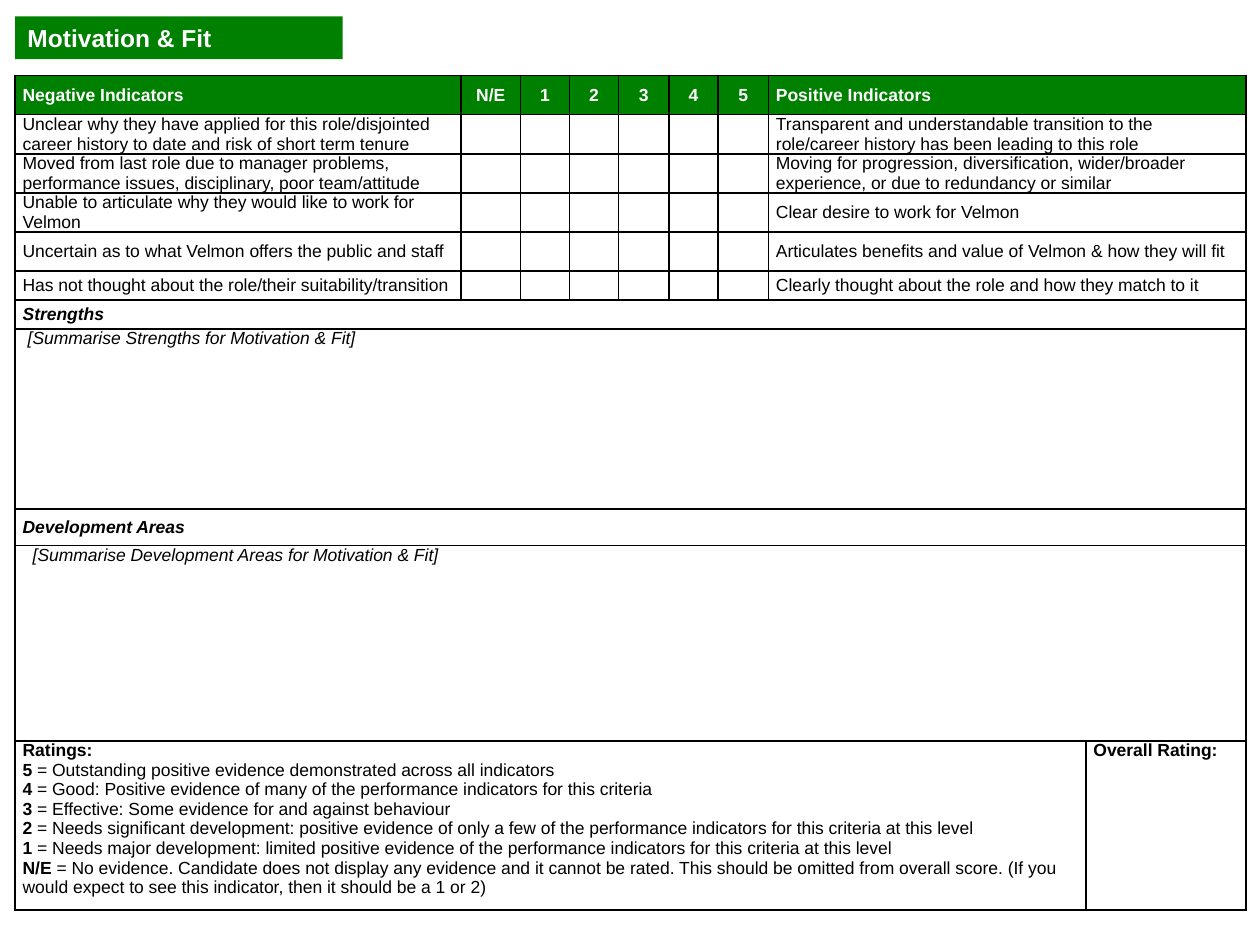
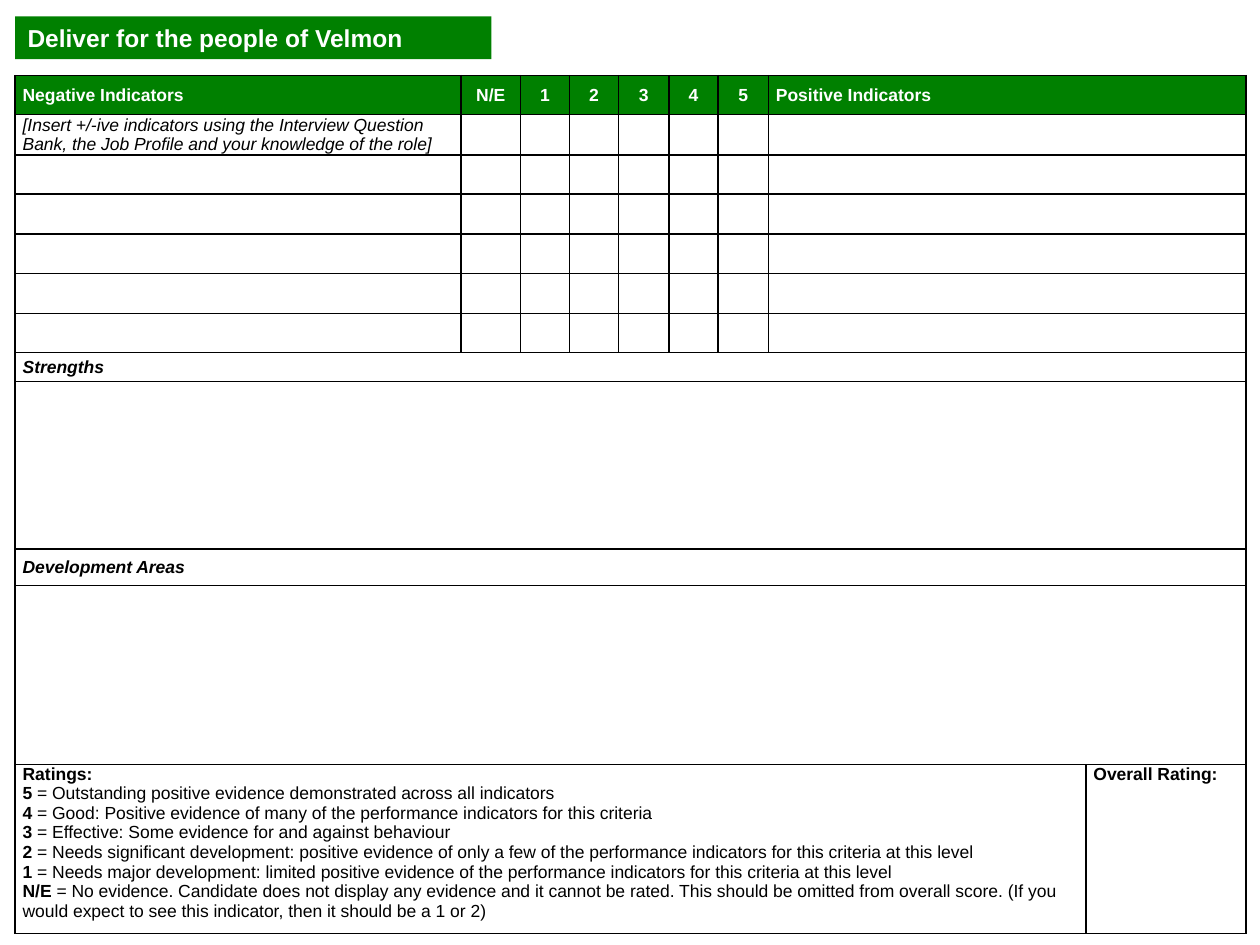
"""Build two interview scoring forms, each with a title band and a rating table."""
import pptx
import pptx.dml.color
import pptx.enum.shapes
import pptx.enum.text
import pptx.oxml
import pptx.oxml.ns
import pptx.util

Inches = pptx.util.Inches
ALIGN = pptx.enum.text.PP_ALIGN
ANCHOR = pptx.enum.text.MSO_ANCHOR
GREEN = pptx.dml.color.RGBColor(0x00, 0x80, 0x00)
WHITE = pptx.dml.color.RGBColor(0xFF, 0xFF, 0xFF)
BLACK = pptx.dml.color.RGBColor(0x00, 0x00, 0x00)
FONT = "Arial"
BODY_SIZE = 10
TITLE_SIZE = 14
LEFT = 0.12
COLUMN_WIDTHS = [3.54, 0.47, 0.39, 0.39, 0.4, 0.39, 0.4, 2.52, 1.27]
LAST_COLUMN = len(COLUMN_WIDTHS) - 1
POSITIVE_COLUMN = LAST_COLUMN - 1
EMPLOYER = "Velmon"
HEADINGS = ["Negative Indicators", "N/E", "1", "2", "3", "4", "5", "Positive Indicators"]
RATINGS = [
    ("Ratings:", ""),
    ("5", " = Outstanding positive evidence demonstrated across all indicators"),
    ("4", " = Good: Positive evidence of many of the performance indicators for this criteria"),
    ("3", " = Effective: Some evidence for and against behaviour"),
    ("2", " = Needs significant development: positive evidence of only a few of the "
          "performance indicators for this criteria at this level"),
    ("1", " = Needs major development: limited positive evidence of the "
          "performance indicators for this criteria at this level"),
    ("N/E", " = No evidence. Candidate does not display any evidence and it cannot be rated. "
            "This should be omitted from overall score. (If you would expect to see this "
            "indicator, then it should be a 1 or 2)"),
]
FORMS = [
    {
        "title": "Motivation & Fit",
        "title_width": 2.6,
        "indicators": [
            ("Unclear why they have applied for this role/disjointed career history to date "
             "and risk of short term tenure",
             "Transparent and understandable transition to the role/career history has been "
             "leading to this role"),
            ("Moved from last role due to manager problems, performance issues, disciplinary, "
             "poor team/attitude",
             "Moving for progression, diversification, wider/broader experience, or due to "
             "redundancy or similar"),
            (f"Unable to articulate why they would like to work for {EMPLOYER}",
             f"Clear desire to work for {EMPLOYER}"),
            (f"Uncertain as to what {EMPLOYER} offers the public and staff",
             f"Articulates benefits and value of {EMPLOYER} & how they will fit"),
            ("Has not thought about the role/their suitability/transition",
             "Clearly thought about the role and how they match to it"),
        ],
        "indicator_heights": [0.31] * 4 + [0.23],
        "indicator_italic": False,
        "sections": [
            ("Strengths", 0.23, "[Summarise Strengths for Motivation & Fit]", 1.43, 0.1),
            ("Development Areas", 0.29,
             "[Summarise Development Areas for Motivation & Fit]", 1.55, 0.14),
        ],
    },
    {
        "title": f"Deliver for the people of {EMPLOYER}",
        "title_width": 3.78,
        "indicators": [
            ("[Insert +/-ive indicators using the Interview Question Bank, the Job Profile "
             "and your knowledge of the role]", ""),
        ] + [("", "")] * 5,
        "indicator_heights": [0.32, 0.31] * 3,
        "indicator_italic": True,
        "sections": [
            ("Strengths", 0.23, "", 1.33, 0.06),
            ("Development Areas", 0.29, "", 1.42, 0.06),
        ],
    },
]


def add_run(paragraph, text, size=BODY_SIZE, color=BLACK, bold=False, italic=False):
    if text:
        run = paragraph.add_run()
        run.text = text
        run.font.name = FONT
        run.font.size = pptx.util.Pt(size)
        run.font.color.rgb = color
        run.font.bold = bold
        run.font.italic = italic


def format_cell(cell, fill):
    cell.margin_left = cell.margin_right = Inches(0.06)
    cell.margin_top = cell.margin_bottom = 0
    cell.vertical_anchor = ANCHOR.MIDDLE
    properties = cell._tc.get_or_add_tcPr()
    for side in ("lnL", "lnR", "lnT", "lnB"):
        properties.append(pptx.oxml.parse_xml(
            f'<a:{side} {pptx.oxml.ns.nsdecls("a")} w="12700"><a:solidFill>'
            f'<a:srgbClr val="{BLACK}"/></a:solidFill></a:{side}>'))
    cell.fill.solid()
    cell.fill.fore_color.rgb = fill
    cell.text_frame.paragraphs[0]._p.append(pptx.oxml.parse_xml(
        f'<a:endParaRPr {pptx.oxml.ns.nsdecls("a")} sz="{BODY_SIZE * 100}"/>'))


presentation = pptx.Presentation()
presentation.slide_width = Inches(10)
presentation.slide_height = Inches(7.5)

for form in FORMS:
    slide = presentation.slides.add_slide(presentation.slide_layouts[6])

    row_heights = [0.31] + form["indicator_heights"]
    for heading, heading_height, summary, summary_height, indent in form["sections"]:
        row_heights += [heading_height, summary_height]
    row_heights.append(1.34)

    table = slide.shapes.add_table(
        len(row_heights), len(COLUMN_WIDTHS), Inches(LEFT), Inches(0.6),
        Inches(sum(COLUMN_WIDTHS)), Inches(sum(row_heights))).table
    table.first_row = False
    table.horz_banding = False
    for column, width in zip(table.columns, COLUMN_WIDTHS):
        column.width = Inches(width)
    for row_number, height in enumerate(row_heights):
        table.rows[row_number].height = Inches(height)
        for cell in table.rows[row_number].cells:
            format_cell(cell, WHITE if row_number else GREEN)

    for column_number, heading in enumerate(HEADINGS):
        paragraph = table.cell(0, column_number).text_frame.paragraphs[0]
        if 0 < column_number < POSITIVE_COLUMN:
            paragraph.alignment = ALIGN.CENTER
        add_run(paragraph, heading, color=WHITE, bold=True)

    for row_number, (negative, positive) in enumerate(form["indicators"], start=1):
        for column_number, text in ((0, negative), (POSITIVE_COLUMN, positive)):
            paragraph = table.cell(row_number, column_number).text_frame.paragraphs[0]
            add_run(paragraph, text, italic=form["indicator_italic"])

    section_row = len(form["indicators"]) + 1
    for row_number in range(section_row):
        table.cell(row_number, POSITIVE_COLUMN).merge(table.cell(row_number, LAST_COLUMN))

    for heading, heading_height, summary, summary_height, indent in form["sections"]:
        for row_number in (section_row, section_row + 1):
            table.cell(row_number, 0).merge(table.cell(row_number, LAST_COLUMN))
        add_run(table.cell(section_row, 0).text_frame.paragraphs[0],
                heading, bold=True, italic=True)
        summary_cell = table.cell(section_row + 1, 0)
        summary_cell.vertical_anchor = ANCHOR.TOP
        summary_cell.margin_left = Inches(indent)
        add_run(summary_cell.text_frame.paragraphs[0], summary, italic=True)
        section_row += 2

    ratings_cell = table.cell(section_row, 0)
    ratings_cell.merge(table.cell(section_row, POSITIVE_COLUMN))
    ratings_cell.vertical_anchor = ANCHOR.TOP
    for number, (score, meaning) in enumerate(RATINGS):
        frame = ratings_cell.text_frame
        paragraph = frame.add_paragraph() if number else frame.paragraphs[0]
        add_run(paragraph, score, bold=True)
        add_run(paragraph, meaning)

    overall_cell = table.cell(section_row, LAST_COLUMN)
    overall_cell.vertical_anchor = ANCHOR.TOP
    add_run(overall_cell.text_frame.paragraphs[0], "Overall Rating:", bold=True)

    title_band = slide.shapes.add_shape(
        pptx.enum.shapes.MSO_SHAPE.RECTANGLE, Inches(LEFT), Inches(0.13),
        Inches(form["title_width"]), Inches(0.34))
    title_band.shadow.inherit = False
    title_band.fill.solid()
    title_band.fill.fore_color.rgb = GREEN
    title_band.line.fill.background()
    title_band.text_frame.word_wrap = True
    title_band.text_frame.vertical_anchor = ANCHOR.MIDDLE
    paragraph = title_band.text_frame.paragraphs[0]
    paragraph.alignment = ALIGN.LEFT
    add_run(paragraph, form["title"], TITLE_SIZE, WHITE, bold=True)

presentation.save("out.pptx")
